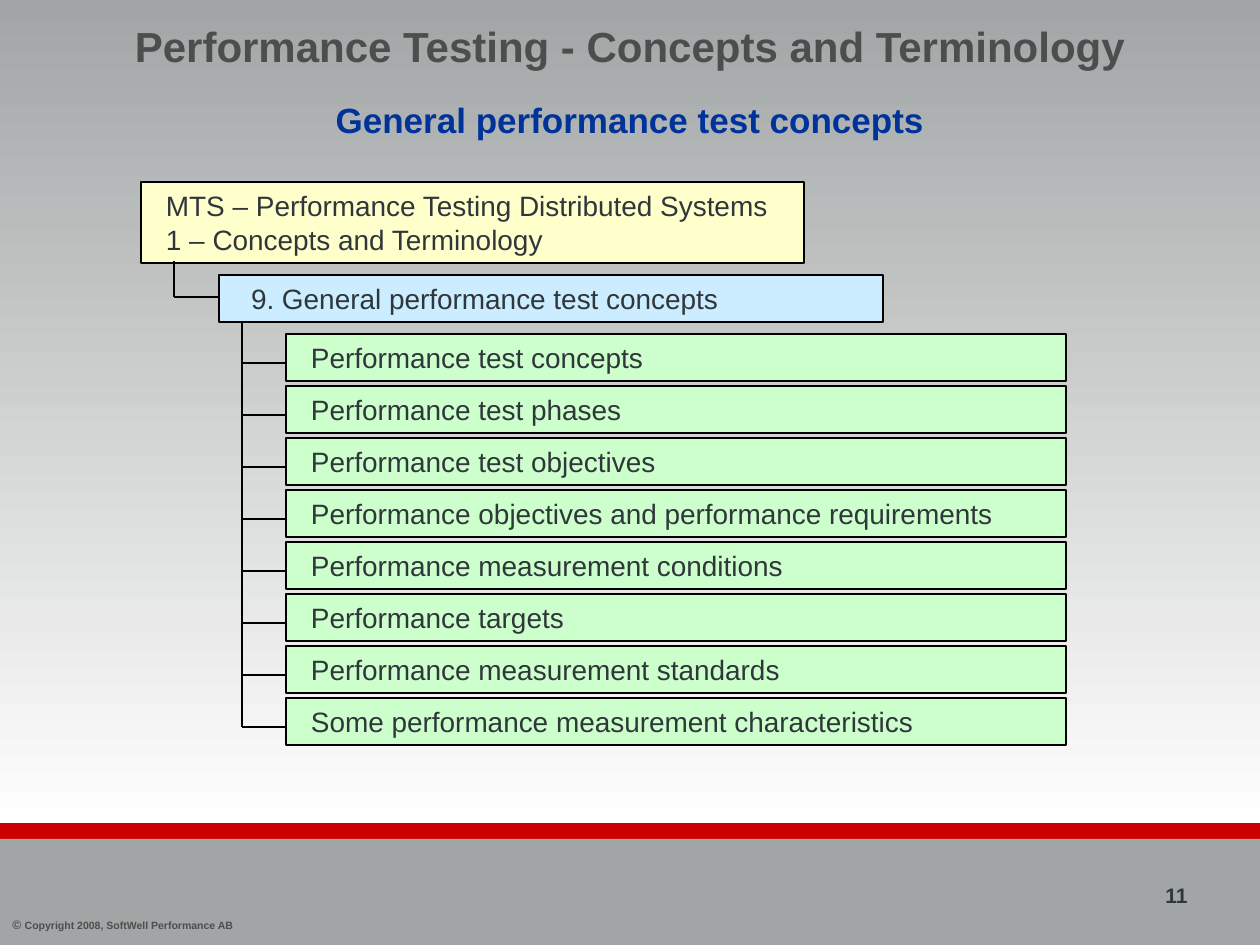
from lxml import etree
from pptx import Presentation
from pptx.dml.color import RGBColor
from pptx.enum.shapes import MSO_CONNECTOR, MSO_SHAPE
from pptx.enum.text import MSO_ANCHOR, PP_ALIGN
from pptx.oxml.ns import qn
from pptx.util import Emu, Pt

RECTANGLE = MSO_SHAPE.RECTANGLE
STRAIGHT = MSO_CONNECTOR.STRAIGHT
TOP, MIDDLE = MSO_ANCHOR.TOP, MSO_ANCHOR.MIDDLE
LEFT, CENTER = PP_ALIGN.LEFT, PP_ALIGN.CENTER

BLACK = RGBColor(0x00, 0x00, 0x00)
WHITE = RGBColor(0xFF, 0xFF, 0xFF)
GREY = RGBColor(0xA2, 0xA5, 0xA5)
DARK_GREY = RGBColor(0x4D, 0x4D, 0x4D)
INK = RGBColor(0x30, 0x37, 0x3B)
NAVY = RGBColor(0x00, 0x33, 0x99)
RED = RGBColor(0xCC, 0x00, 0x00)
YELLOW = RGBColor(0xFF, 0xFF, 0xCC)
BLUE = RGBColor(0xCC, 0xEC, 0xFF)
GREEN = RGBColor(0xCC, 0xFF, 0xCC)

FONT = "Arial"
PX_PER_INCH = 126
SLIDE_W, SLIDE_H = 1260, 945

COURSE = [
    "MTS – Performance Testing Distributed Systems",
    "1 – Concepts and Terminology",
]
CHAPTER = "9. General performance test concepts"
TOPICS = [
    "Performance test concepts",
    "Performance test phases",
    "Performance test objectives",
    "Performance objectives and performance requirements",
    "Performance measurement conditions",
    "Performance targets",
    "Performance measurement standards",
    "Some performance measurement characteristics",
]


def px(length):
    return Emu(round(length * 914400 / PX_PER_INCH))


def add_block(slide, box, color, outlined=False):
    block = slide.shapes.add_shape(RECTANGLE, *map(px, box))
    block.shadow.inherit = False
    block.fill.solid()
    block.fill.fore_color.rgb = color
    if outlined:
        block.line.color.rgb = BLACK
        block.line.width = Pt(0.75)
    else:
        block.line.fill.background()
    return block


def add_run(paragraph, text, size, color, bold=True):
    run = paragraph.add_run()
    run.text = text
    run.font.name = FONT
    run.font.size = Pt(size)
    run.font.bold = bold
    run.font.color.rgb = color


def add_label(slide, box, runs, color, align=LEFT, anchor=TOP):
    label = slide.shapes.add_textbox(*map(px, box))
    label.text_frame.word_wrap = True
    label.text_frame.vertical_anchor = anchor
    paragraph = label.text_frame.paragraphs[0]
    paragraph.alignment = align
    for text, size in runs:
        add_run(paragraph, text, size, color)


def add_branch(slide, x1, y1, x2, y2):
    branch = slide.shapes.add_connector(STRAIGHT, *map(px, (x1, y1, x2, y2)))
    branch.line.color.rgb = BLACK
    branch.line.width = Pt(1.5)
    etree.SubElement(branch._element.spPr, qn("a:effectLst"))


def add_node(slide, box, lines, color, indent=12):
    node = add_block(slide, box, color, outlined=True)
    frame = node.text_frame
    frame.word_wrap = True
    frame.vertical_anchor = MIDDLE
    frame.margin_left = px(13 + indent)
    paragraph = frame.paragraphs[0]
    paragraph.alignment = LEFT
    for number, line in enumerate(lines):
        if number:
            paragraph.add_line_break()
        add_run(paragraph, line, 16, INK, bold=False)


def draw_backdrop(slide, left, top, width, height):
    backdrop = add_block(slide, (left, top, width, height - 118), WHITE)
    backdrop.fill.gradient()
    backdrop.fill.gradient_angle = 270
    for stop, color, position in zip(backdrop.fill.gradient_stops, (GREY, WHITE), (0, 1)):
        stop.color.rgb = color
        stop.position = position
    add_block(slide, (left, top + height - 122, width, 16), RED)
    add_block(slide, (left, top + height - 106, width, 106), GREY)


def draw_header(slide, left, top, width):
    add_label(slide, (left, top, width, 92),
              [("Performance Testing - Concepts and Terminology", 24)],
              DARK_GREY, CENTER, MIDDLE)
    add_label(slide, (left, top + 92, width, 54),
              [("General performance test concepts", 20)], NAVY, CENTER)


def draw_topic_tree(slide, left, top):
    add_node(slide, (left, top, 663, 81), COURSE, YELLOW)
    add_branch(slide, left + 33, top + 79, left + 33, top + 115)
    add_branch(slide, left + 33, top + 115, left + 78, top + 115)
    add_node(slide, (left + 78, top + 93, 664, 47), [CHAPTER], BLUE, indent=19)

    trunk = left + 101
    topics_left, topics_top, pitch = left + 145, top + 152, 52
    last_branch = topics_top + pitch * (len(TOPICS) - 1) + 29
    add_branch(slide, trunk, top + 140, trunk, last_branch)
    for row, topic in enumerate(TOPICS):
        y = topics_top + row * pitch
        add_node(slide, (topics_left, y, 780, 47), [topic], GREEN)
        add_branch(slide, trunk, y + 29, topics_left, y + 29)


def draw_footer(slide, left, top, width):
    add_label(slide, (left, top + 72, 315, 28),
              [("© ", 7), ("Copyright 2008, SoftWell Performance AB", 6)],
              DARK_GREY)
    add_label(slide, (left + width - 107, top + 37, 107, 38), [("11", 12)], INK)


def main():
    deck = Presentation()
    deck.slide_width, deck.slide_height = px(SLIDE_W), px(SLIDE_H)
    slide = deck.slides.add_slide(deck.slide_layouts[6])
    draw_backdrop(slide, 0, 0, SLIDE_W, SLIDE_H)
    draw_header(slide, 0, 0, SLIDE_W)
    draw_topic_tree(slide, 141, 182)
    draw_footer(slide, 0, 839, SLIDE_W)
    deck.save("out.pptx")


if __name__ == "__main__":
    main()
